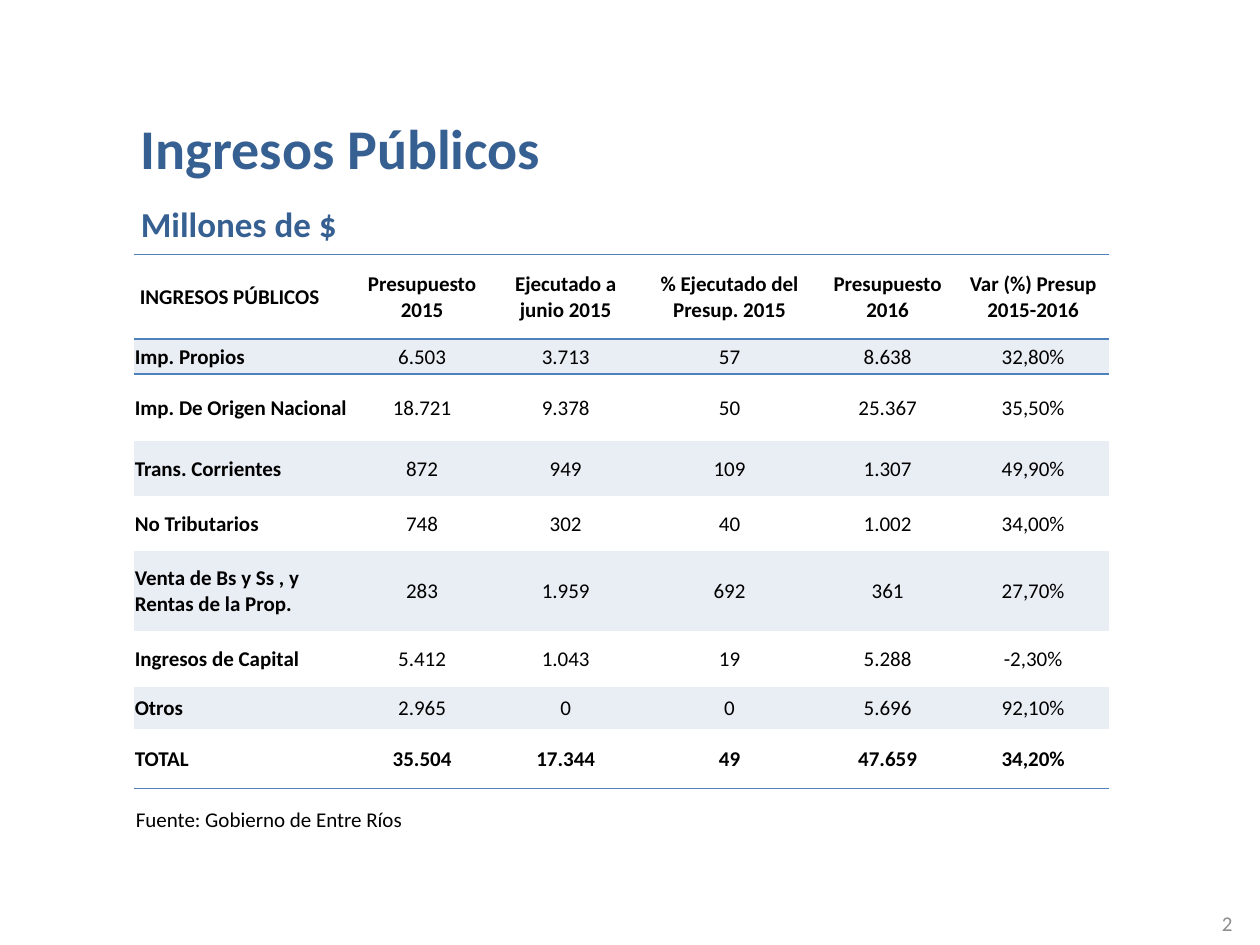
"""Build the public revenue table slide."""
from lxml import etree
from pptx import Presentation
from pptx import util as u
from pptx.dml.color import RGBColor
from pptx.enum import text
from pptx.oxml import ns

BLUE, RULE, BAND, BLACK, GREY = "376092", "4F81BD", "E9EDF4", "000000", "8C8C8C"
LEFT, CENTER, RIGHT = text.PP_ALIGN.LEFT, text.PP_ALIGN.CENTER, text.PP_ALIGN.RIGHT


def write(frame, words, size, color, bold=False, align=LEFT):
    frame.text = words
    frame.word_wrap = True
    para = frame.paragraphs[0]
    para.alignment = align
    font = para.runs[0].font
    font.name, font.size, font.bold = "Calibri", u.Pt(size), bold
    font.color.rgb = RGBColor.from_string(color)


def add_border(cell, side):
    line = etree.SubElement(cell._tc.get_or_add_tcPr(), ns.qn(f"a:{side}"), w=str(u.Pt(1)))
    fill = etree.SubElement(line, ns.qn("a:solidFill"))
    etree.SubElement(fill, ns.qn("a:srgbClr"), val=RULE)


deck = Presentation()
deck.slide_width, deck.slide_height = u.Inches(10), u.Inches(7.5)
page = deck.slides.add_slide(deck.slide_layouts[6])

labels = [
    ("2", 7.55, 7.13, 2.33, 0.4, 12, GREY, False, RIGHT),
    ("Ingresos Públicos", 1.02, 0.85, 6.46, 0.64, 32, BLUE, True, LEFT),
    ("Millones de $", 1.02, 1.56, 6.46, 0.44, 20, BLUE, True, LEFT),
    ("Fuente: Gobierno de Entre Ríos", 0.98, 6.35, 6.1, 0.3, 12, BLACK, False, LEFT),
]
for words, left, top, width, height, size, color, bold, align in labels:
    box = page.shapes.add_textbox(*map(u.Inches, (left, top, width, height)))
    write(box.text_frame, words, size, color, bold, align)
    if align == RIGHT:
        box.text_frame.vertical_anchor = text.MSO_ANCHOR.MIDDLE

rows = [
    ("INGRESOS PÚBLICOS", "Presupuesto 2015", "Ejecutado a junio 2015",
     "% Ejecutado del Presup. 2015", "Presupuesto 2016", "Var (%) Presup 2015-2016"),
    ("Imp. Propios", "6.503", "3.713", "57", "8.638", "32,80%"),
    ("Imp. De Origen Nacional", "18.721", "9.378", "50", "25.367", "35,50%"),
    ("Trans. Corrientes", "872", "949", "109", "1.307", "49,90%"),
    ("No Tributarios", "748", "302", "40", "1.002", "34,00%"),
    ("Venta de Bs y Ss , y Rentas de la Prop.", "283", "1.959", "692", "361", "27,70%"),
    ("Ingresos de Capital", "5.412", "1.043", "19", "5.288", "-2,30%"),
    ("Otros", "2.965", "0", "0", "5.696", "92,10%"),
    ("TOTAL", "35.504", "17.344", "49", "47.659", "34,20%"),
]
widths = [1.75, 1.08, 1.2, 1.4, 1.11, 1.2]
heights = [0.67, 0.28, 0.53, 0.44, 0.43, 0.64, 0.44, 0.34, 0.47]
header, total = 0, len(rows) - 1
borders = {header: ("lnT", "lnB"), header + 1: ("lnT",), total: ("lnB",)}

table = page.shapes.add_table(
    len(rows), len(widths), u.Inches(1.06), u.Inches(2.02),
    u.Inches(sum(widths)), u.Inches(sum(heights))).table
table.first_row = table.horz_banding = False
table._tbl.tblPr.find(ns.qn("a:tableStyleId")).text = "{2D5ABB26-0587-4C30-8999-92F81FD0307C}"
for column, width in zip(table.columns, widths):
    column.width = u.Inches(width)

for r, (values, height) in enumerate(zip(rows, heights)):
    table.rows[r].height = u.Inches(height)
    for c, value in enumerate(values):
        cell = table.cell(r, c)
        bold = c == 0 or r in (header, total)
        write(cell.text_frame, value, 12, BLACK, bold, CENTER if c else LEFT)
        cell.vertical_anchor = text.MSO_ANCHOR.MIDDLE
        cell.margin_left = u.Inches(0.05 if r == header and c == 0 else 0.01)
        cell.margin_top = cell.margin_right = u.Inches(0.01)
        cell.margin_bottom = 0
        for side in borders.get(r, ()):
            add_border(cell, side)
        if r % 2:
            cell.fill.solid()
            cell.fill.fore_color.rgb = RGBColor.from_string(BAND)
        else:
            cell.fill.background()

deck.save("out.pptx")
